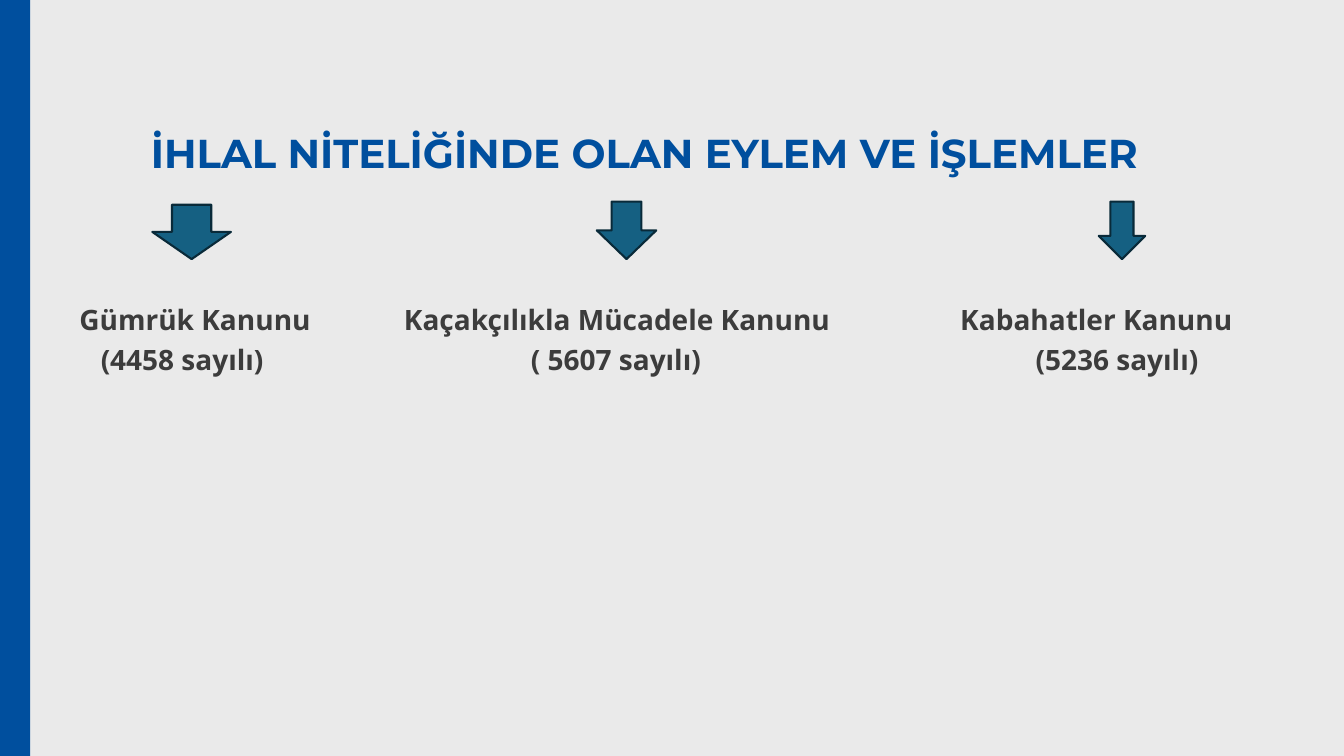
from pptx import Presentation
from pptx.dml.color import RGBColor
from pptx.enum.shapes import MSO_SHAPE
from pptx.enum.text import MSO_ANCHOR, MSO_AUTO_SIZE, PP_ALIGN
from pptx.util import Cm, Pt

DOWN_ARROW, RECTANGLE = MSO_SHAPE.DOWN_ARROW, MSO_SHAPE.RECTANGLE
MIDDLE, TOP = MSO_ANCHOR.MIDDLE, MSO_ANCHOR.TOP
CENTER, LEFT = PP_ALIGN.CENTER, PP_ALIGN.LEFT
NO_FIT = MSO_AUTO_SIZE.NONE

BACKGROUND = RGBColor(0xEA, 0xEA, 0xEA)
BLUE = RGBColor(0x00, 0x4F, 0x9E)
TEAL = RGBColor(0x15, 0x60, 0x82)
DARK_TEAL = RGBColor(0x09, 0x2A, 0x39)
GREY = RGBColor(0x3C, 0x3C, 0x3C)

SLIDE_WIDTH, SLIDE_HEIGHT = 33.87, 19.05
ARROW_BOTTOM = 6.53
LAWS_TOP, LAWS_HEIGHT = 7.72, 2.2

TITLE_FONT = {"name": "Montserrat", "size": Pt(28.8), "bold": True}
LAW_FONT = {"name": "Open Sans", "size": Pt(20), "bold": True}
FRAME = {"word_wrap": True, "auto_size": NO_FIT, "margin_left": 0,
         "margin_right": 0, "margin_top": 0, "margin_bottom": 0}

LAWS = [
    {"name": "Gümrük Kanunu", "number": "(4458 sayılı)", "indent": 0.54,
     "left": 2, "width": 7, "arrow": (3.84, 1.98, 1.37)},
    {"name": "Kaçakçılıkla Mücadele Kanunu", "number": "( 5607 sayılı)", "indent": 3.2,
     "left": 10.18, "width": 12, "arrow": (15.04, 1.5, 1.45)},
    {"name": "Kabahatler Kanunu", "number": "(5236 sayılı)", "indent": 1.9,
     "left": 24.2, "width": 8, "arrow": (27.69, 1.17, 1.45)},
]


def apply(target, values):
    """Set every attribute in values on the target."""
    for attribute, value in values.items():
        setattr(target, attribute, value)


def write(paragraph, text, font, color, alignment):
    """Fill a paragraph with formatted text."""
    paragraph.text = text
    apply(paragraph, {"alignment": alignment, "line_spacing": 0.9, "space_before": Pt(0)})
    run_font = paragraph.runs[0].font
    apply(run_font, font)
    run_font.color.rgb = color


def add_solid(slide, kind, box, fill):
    """Add a plain filled shape in the given box."""
    solid = slide.shapes.add_shape(kind, *map(Cm, box))
    solid.shadow.inherit = False
    solid.fill.solid()
    solid.fill.fore_color.rgb = fill
    solid.line.fill.background()
    return solid


def add_title(slide, left, top, width, height):
    """Place and format the title."""
    title = slide.shapes.title
    apply(title, {"left": Cm(left), "top": Cm(top), "width": Cm(width), "height": Cm(height)})
    apply(title.text_frame, FRAME | {"vertical_anchor": MIDDLE})
    write(title.text_frame.paragraphs[0], "İHLAL NİTELİĞİNDE OLAN EYLEM VE İŞLEMLER",
          TITLE_FONT, BLUE, CENTER)


def add_law(slide, law, top, height):
    """Add a law's arrow, name and number."""
    arrow_left, arrow_width, arrow_height = law["arrow"]
    arrow = add_solid(slide, DOWN_ARROW,
                      (arrow_left, ARROW_BOTTOM - arrow_height, arrow_width, arrow_height), TEAL)
    arrow.line.color.rgb = DARK_TEAL
    arrow.line.width = Pt(1.5)

    label = slide.shapes.add_textbox(Cm(law["left"]), Cm(top), Cm(law["width"]), Cm(height))
    frame = label.text_frame
    apply(frame, FRAME | {"vertical_anchor": TOP})
    write(frame.paragraphs[0], law["name"], LAW_FONT, GREY, LEFT)
    number = frame.add_paragraph()
    write(number, law["number"], LAW_FONT, GREY, LEFT)
    number.space_before = Pt(7)
    number._p.get_or_add_pPr().set("marL", str(Cm(law["indent"])))


def main():
    """Build and save the slide."""
    presentation = Presentation()
    presentation.slide_width = Cm(SLIDE_WIDTH)
    presentation.slide_height = Cm(SLIDE_HEIGHT)
    slide = presentation.slides.add_slide(presentation.slide_layouts[5])
    slide.background.fill.solid()
    slide.background.fill.fore_color.rgb = BACKGROUND

    add_title(slide, 2.24, 3.21, 28, 1.4)
    for law in LAWS:
        add_law(slide, law, LAWS_TOP, LAWS_HEIGHT)
    add_solid(slide, RECTANGLE, (0, 0, 0.76, SLIDE_HEIGHT), BLUE)
    presentation.save("out.pptx")


if __name__ == "__main__":
    main()
